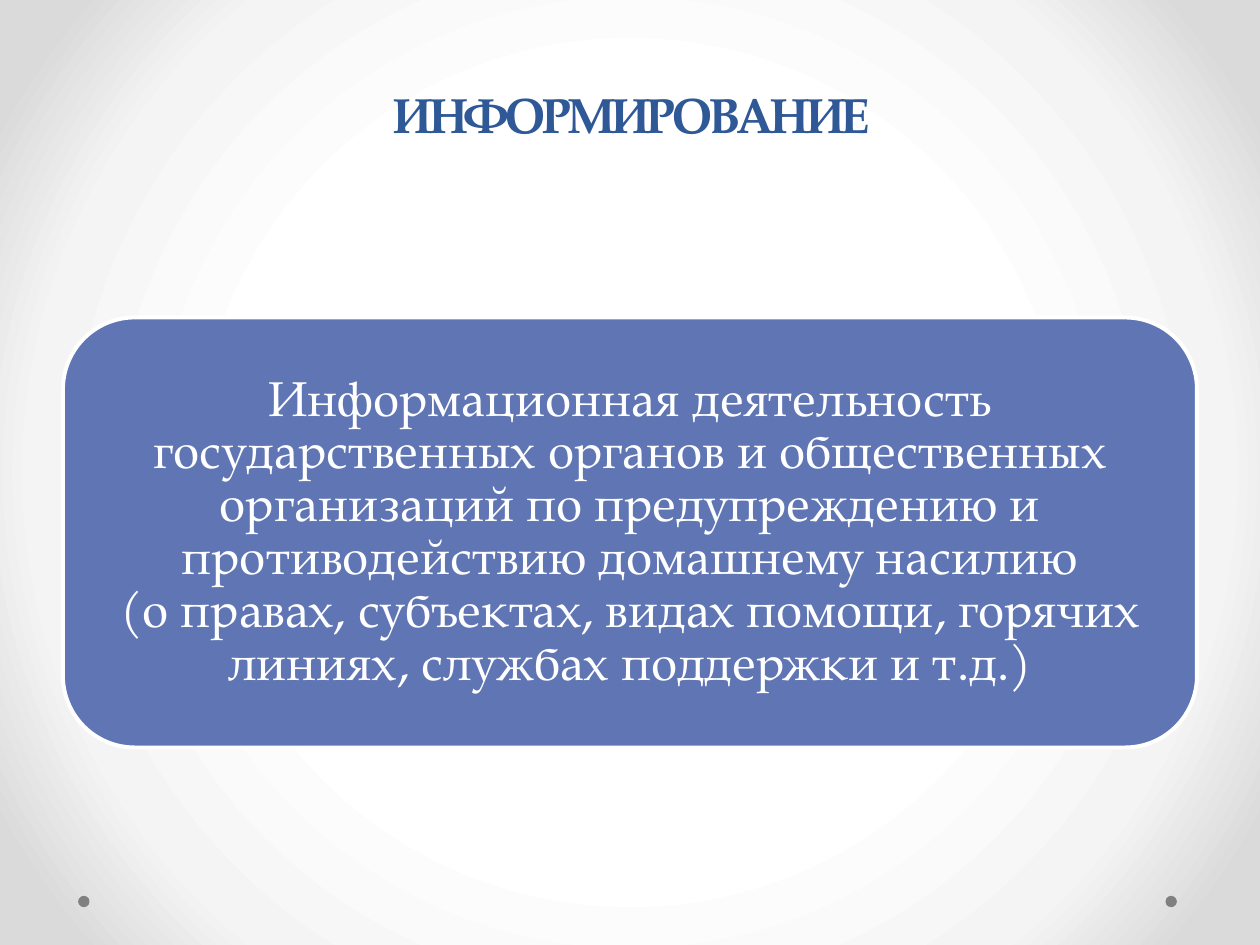
from dataclasses import dataclass

from lxml.etree import SubElement
from pptx import Presentation
from pptx.dml.color import RGBColor
from pptx.enum.shapes import MSO_SHAPE
from pptx.enum.text import MSO_ANCHOR, PP_ALIGN
from pptx.oxml.ns import qn
from pptx.util import Inches, Pt

WIDTH, HEIGHT = 10, 7.5
FONT = "TeX Gyre Pagella"
BACKDROP = ((50, "FFFFFF"), (76, "F4F4F4"), (92, "DADADA"))


@dataclass
class Area:
    """A box given as shares of the slide's width and height."""
    left: float
    top: float
    width: float
    height: float

    def lengths(self) -> tuple:
        return (Inches(self.left * WIDTH), Inches(self.top * HEIGHT),
                Inches(self.width * WIDTH), Inches(self.height * HEIGHT))


def color(code: str) -> RGBColor:
    return RGBColor.from_string(code)


def paint_backdrop(slide) -> None:
    """Radial gradient, light in the middle."""
    slide.background.fill.gradient()
    gradient = next(slide.element.iter(qn("a:gradFill")))
    for part in list(gradient):
        gradient.remove(part)
    stops = SubElement(gradient, qn("a:gsLst"))
    for share, code in BACKDROP:
        stop = SubElement(stops, qn("a:gs"), pos=str(share * 1000))
        SubElement(stop, qn("a:srgbClr"), val=code)
    circle = SubElement(gradient, qn("a:path"), path="circle")
    SubElement(circle, qn("a:fillToRect"), l="50000", t="50000", r="50000", b="50000")


def draw_shape(slide, kind: MSO_SHAPE, area: Area, fill: str):
    shape = slide.shapes.add_shape(kind, *area.lengths())
    shape.shadow.inherit = False
    shape.fill.solid()
    shape.fill.fore_color.rgb = color(fill)
    shape.line.fill.background()
    return shape


def write(shape, text: str, ink: str, anchor: MSO_ANCHOR, spacing, bold: bool = False):
    frame = shape.text_frame
    frame.word_wrap = True
    frame.vertical_anchor = anchor
    paragraph = frame.paragraphs[0]
    paragraph.text = text
    paragraph.alignment = PP_ALIGN.CENTER
    paragraph.line_spacing = spacing
    for run in paragraph.runs:
        for name, value in {"name": FONT, "size": Pt(28), "bold": bold}.items():
            setattr(run.font, name, value)
        run.font.color.rgb = color(ink)
    return frame


def main() -> None:
    deck = Presentation()
    deck.slide_width, deck.slide_height = Inches(WIDTH), Inches(HEIGHT)
    slide = deck.slides.add_slide(deck.slide_layouts[6])
    paint_backdrop(slide)

    # Corner dots
    for left in (0.925, 0.062):
        draw_shape(slide, MSO_SHAPE.OVAL, Area(left, 0.948, 0.009, 0.012), "808080")

    # Heading, with tightened letters
    heading = slide.shapes.add_textbox(*Area(0.051, 0.048, 0.9, 0.11).lengths())
    title = write(heading, "ИНФОРМИРОВАНИЕ", "2F5897", MSO_ANCHOR.BOTTOM, Pt(58), bold=True)
    title.paragraphs[0].runs[0].font._element.set("spc", "-100")

    # Definition panel
    panel = draw_shape(slide, MSO_SHAPE.ROUNDED_RECTANGLE,
                       Area(0.05, 0.336, 0.9, 0.455), "6076B4")
    panel.line.color.rgb = color("FFFFFF")
    panel.line.width = Pt(2.25)
    definition = write(
        panel,
        "Информационная деятельность государственных органов и общественных "
        "организаций по предупреждению и противодействию домашнему насилию\v"
        "(о правах, субъектах, видах помощи, горячих линиях, "
        "службах поддержки и т.д.)",
        "FFFFFF", MSO_ANCHOR.MIDDLE, 0.9)
    for side in ("left", "top", "right", "bottom"):
        setattr(definition, f"margin_{side}", Inches(0.12))

    deck.save("out.pptx")


if __name__ == "__main__":
    main()
